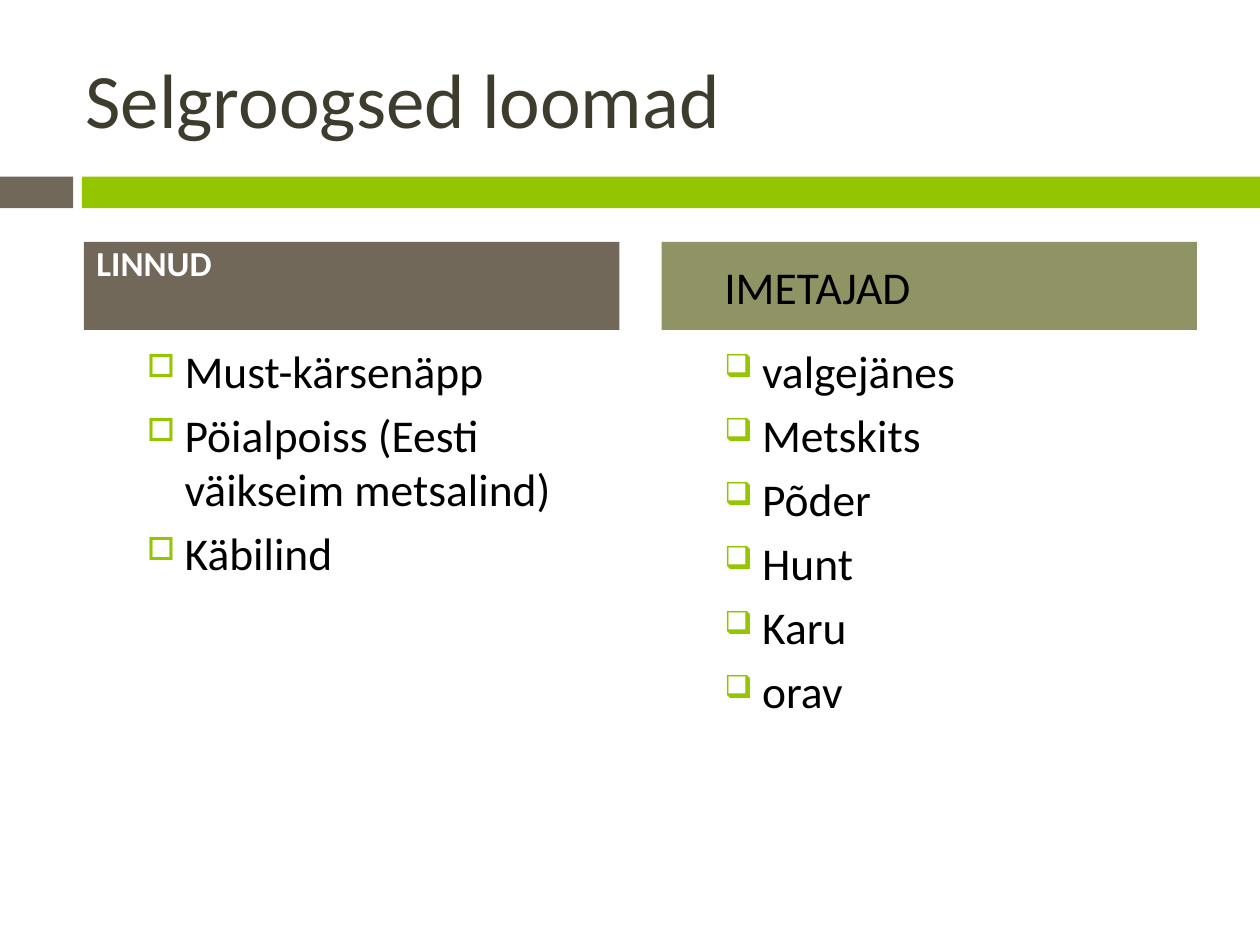
import pptx
import pptx.dml.color
import pptx.enum.shapes
import pptx.enum.text
import pptx.oxml.ns
import pptx.util
from lxml import etree

Pt = pptx.util.Pt
ANCHOR = pptx.enum.text.MSO_ANCHOR
COLORS = {"title": "3E3D2D", "brown": "71685A", "green": "94C600",
          "olive": "909465", "white": "FFFFFF", "black": "000000"}
FONT = "Calibri"


def rgb(name):
    return pptx.dml.color.RGBColor.from_string(COLORS[name])


def add_bar(slide, box, color):
    shape = slide.shapes.add_shape(pptx.enum.shapes.MSO_SHAPE.RECTANGLE, *map(Pt, box))
    shape.shadow.inherit = False
    shape.fill.solid()
    shape.fill.fore_color.rgb = rgb(color)
    shape.line.fill.background()
    return shape


def set_bullet(paragraph, character):
    properties = paragraph._p.get_or_add_pPr()
    color = etree.SubElement(properties, pptx.oxml.ns.qn("a:buClr"))
    etree.SubElement(color, pptx.oxml.ns.qn("a:srgbClr"), val=COLORS["green"])
    etree.SubElement(properties, pptx.oxml.ns.qn("a:buSzPct"), val="70000")
    etree.SubElement(properties, pptx.oxml.ns.qn("a:buChar"), char=character)


def write_text(shape, lines, size=26, color="black", bold=False, anchor=ANCHOR.TOP,
               top=3.6, left=0, hanging=0, space_before=0, bullet=None):
    frame = shape.text_frame
    frame.word_wrap = True
    frame.vertical_anchor = anchor
    frame.margin_top = Pt(top)
    for index, line in enumerate(lines):
        paragraph = frame.add_paragraph() if index else frame.paragraphs[0]
        paragraph.alignment = pptx.enum.text.PP_ALIGN.LEFT
        paragraph.space_before = Pt(space_before)
        properties = paragraph._p.get_or_add_pPr()
        properties.set("marL", str(Pt(left)))
        properties.set("indent", str(Pt(-hanging)))
        if bullet:
            set_bullet(paragraph, bullet)
        run = paragraph.add_run()
        run.text = line
        run.font.name = FONT
        run.font.size = Pt(size)
        run.font.bold = bold
        run.font.color.rgb = rgb(color)


def add_title(slide, box, text):
    """Place the title above a two-part band that spans the slide."""
    left, top, width, height = box
    title = slide.shapes.add_textbox(*map(Pt, box))
    write_text(title, [text], size=44, color="title", anchor=ANCHOR.MIDDLE)
    band_top = top + height + 11
    add_bar(slide, (0, band_top, left, 18), "brown")
    add_bar(slide, (left + 5, band_top, 720 - left - 5, 18), "green")


def add_column(slide, box, heading, heading_color, heading_format, items, bullet):
    left, top, width, height = box
    header_height, gap = 50.4, 3.6
    header = add_bar(slide, (left, top, width, header_height), heading_color)
    write_text(header, [heading], **heading_format)
    body_top = top + header_height + gap
    body = slide.shapes.add_textbox(
        *map(Pt, (left, body_top, width, height - header_height - gap)))
    write_text(body, items, left=50.4, hanging=21.6, space_before=5.5, bullet=bullet)


def main():
    presentation = pptx.Presentation()
    presentation.slide_width, presentation.slide_height = Pt(720), Pt(540)
    slide = presentation.slides.add_slide(presentation.slide_layouts[6])
    add_title(slide, (41.8, 21.6, 642.2, 68.4), "Selgroogsed loomad")

    columns = [
        ("LINNUD", "brown", dict(size=20, color="white", bold=True, top=0),
         ["Must-kärsenäpp", "Pöialpoiss (Eesti väikseim metsalind)", "Käbilind"], "□"),
        ("IMETAJAD", "olive", dict(anchor=ANCHOR.MIDDLE, left=28.8, space_before=5.5),
         ["valgejänes", "Metskits", "Põder", "Hunt", "Karu", "orav"], "❑"),
    ]
    for index, column in enumerate(columns):
        add_column(slide, (48 + index * 330, 138.2, 306, 336.2), *column)
    presentation.save("out.pptx")


if __name__ == "__main__":
    main()
